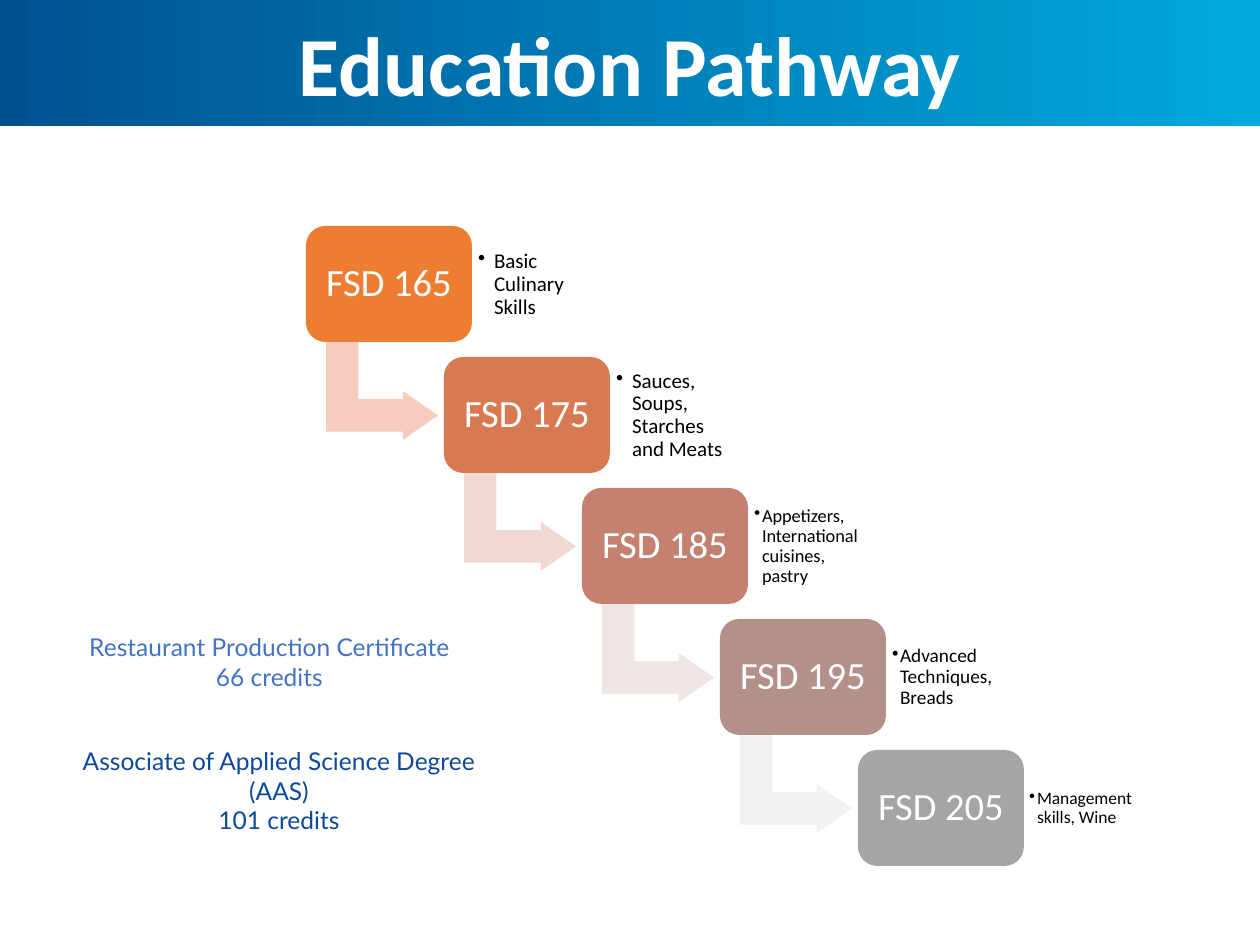
from pptx import Presentation
from pptx import util as u
from pptx.dml.color import RGBColor
from pptx.enum import shapes, text
from pptx.oxml import ns
from lxml import etree

SCALE = 914400 / 126
WHITE = RGBColor(0xFF, 0xFF, 0xFF)
BLACK = RGBColor(0, 0, 0)
BANNER_DARK = RGBColor(0x00, 0x51, 0x92)
BANNER_LIGHT = RGBColor(0x00, 0xA9, 0xDC)
CERTIFICATE_BLUE = RGBColor(0x44, 0x72, 0xC4)
DEGREE_BLUE = RGBColor(0x0C, 0x48, 0x9B)
BOX_COLOURS = [
    RGBColor(0xED, 0x7D, 0x31),
    RGBColor(0xD8, 0x7A, 0x51),
    RGBColor(0xC4, 0x81, 0x70),
    RGBColor(0xB4, 0x90, 0x8B),
    RGBColor(0xA5, 0xA5, 0xA5),
]
ARROW_COLOURS = [
    RGBColor(0xF6, 0xCC, 0xBE),
    RGBColor(0xF1, 0xD8, 0xD3),
    RGBColor(0xEF, 0xE5, 0xE4),
    RGBColor(0xF1, 0xF1, 0xF1),
]
COURSES = [
    ("FSD 165", "Basic Culinary Skills", 12, 16, 6),
    ("FSD 175", "Sauces, Soups, Starches and Meats", 12, 16, 6),
    ("FSD 185", "Appetizers, International cuisines, pastry", 10.5, 8, 6),
    ("FSD 195", "Advanced Techniques, Breads", 11, 8, 6),
    ("FSD 205", "Management skills, Wine", 10, 8, 5),
]
FIRST_LEFT, FIRST_TOP = 306, 226
STEP_X, STEP_Y = 138, 131
BOX_WIDTH, BOX_HEIGHT = 166, 116


def px(length):
    return u.Emu(round(length * SCALE))


def add_bullet(para, indent):
    properties = para._p.get_or_add_pPr()
    properties.set("marL", str(px(indent)))
    properties.set("indent", str(-px(indent)))
    etree.SubElement(properties, ns.qn("a:buChar")).set("char", "•")


def write(frame, lines, size, color, font="Calibri", bold=False, spacing=None,
          align=text.PP_ALIGN.CENTER, anchor=text.MSO_ANCHOR.TOP,
          inset=None, bullet=None, grow=False):
    frame.word_wrap = True
    frame.vertical_anchor = anchor
    if grow:
        frame.auto_size = text.MSO_AUTO_SIZE.SHAPE_TO_FIT_TEXT
    if inset is not None:
        frame.margin_left = frame.margin_right = px(inset)
        frame.margin_top = frame.margin_bottom = px(inset)
    for number, line in enumerate(lines):
        para = frame.add_paragraph() if number else frame.paragraphs[0]
        para.alignment = align
        para.line_spacing = spacing
        if bullet:
            add_bullet(para, bullet)
        span = para.add_run()
        span.text = line
        span.font.name = font
        span.font.size = u.Pt(size)
        span.font.bold = bold
        span.font.color.rgb = color


def add_text(parent, left, top, width, height, lines, **style):
    box = parent.shapes.add_textbox(px(left), px(top), px(width), px(height))
    write(box.text_frame, lines, **style)


def add_block(parent, kind, left, top, width, height, color=None):
    block = parent.shapes.add_shape(kind, px(left), px(top), px(width), px(height))
    block.shadow.inherit = False
    block.line.fill.background()
    if color is not None:
        block.fill.solid()
        block.fill.fore_color.rgb = color
    return block


def add_banner(page):
    banner = add_block(page, shapes.MSO_SHAPE.RECTANGLE, 0, 0, 1260, 126)
    banner.fill.gradient()
    banner.fill.gradient_angle = 0
    for stop, color in zip(banner.fill.gradient_stops, (BANNER_DARK, BANNER_LIGHT)):
        stop.color.rgb = color
    add_text(page, 0, 6, 1260, 115, ["Education Pathway"],
             size=48, color=WHITE, bold=True, grow=True)


def add_arrow(parent, left, top, color):
    arrow = add_block(parent, shapes.MSO_SHAPE.BENT_UP_ARROW, left, top, 98, 112, color)
    arrow.rotation = 90
    for number, value in enumerate((0.33, 0.25, 0.36)):
        arrow.adjustments[number] = value


def add_course(parent, left, top, color, course):
    name, skills, size, indent, inset = course
    box = add_block(parent, shapes.MSO_SHAPE.ROUNDED_RECTANGLE,
                    left, top, BOX_WIDTH, BOX_HEIGHT, color)
    write(box.text_frame, [name], size=22, color=WHITE, spacing=0.9,
          anchor=text.MSO_ANCHOR.MIDDLE, inset=11)
    add_text(parent, left + BOX_WIDTH, top + 11, 121, 95, [skills],
             size=size, color=BLACK, spacing=0.9, align=text.PP_ALIGN.LEFT,
             anchor=text.MSO_ANCHOR.MIDDLE, inset=inset, bullet=indent)


def add_pathway(page):
    pathway = page.shapes.add_group_shape()
    for number, course in enumerate(COURSES):
        left = FIRST_LEFT + number * STEP_X
        top = FIRST_TOP + number * STEP_Y
        if number < len(ARROW_COLOURS):
            add_arrow(pathway, left + 27, top + 109, ARROW_COLOURS[number])
        add_course(pathway, left, top, BOX_COLOURS[number], course)


def main():
    deck = Presentation()
    deck.slide_width, deck.slide_height = px(1260), px(945)
    page = deck.slides.add_slide(deck.slide_layouts[6])
    add_banner(page)
    add_pathway(page)
    add_text(page, 44, 740, 470, 72,
             ["Associate of Applied Science Degree (AAS)", "101 credits"],
             size=14, color=DEGREE_BLUE, font="Lato", grow=True)
    add_text(page, -57, 626, 653, 72,
             ["Restaurant Production Certificate", "66 credits"],
             size=14, color=CERTIFICATE_BLUE, font="Lato", grow=True)
    deck.save("out.pptx")


if __name__ == "__main__":
    main()
